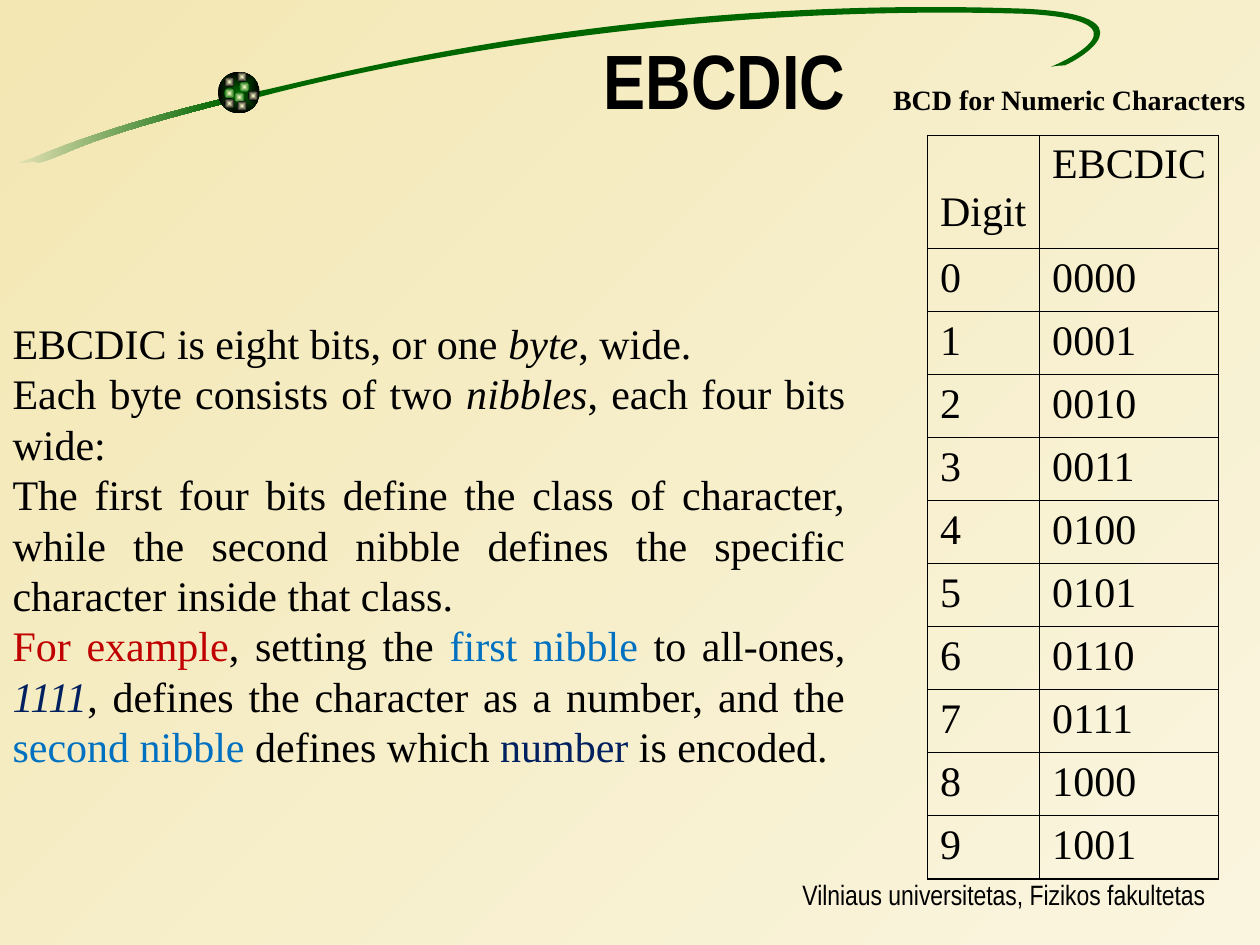
"""Build the EBCDIC slide with its swoosh ornament, explanation and digit table."""
from lxml.etree import SubElement
from pptx import Presentation
from pptx.dml.color import RGBColor
from pptx.enum.shapes import MSO_SHAPE
from pptx.enum.text import MSO_ANCHOR, MSO_AUTO_SIZE, PP_ALIGN
from pptx.oxml import parse_xml
from pptx.oxml.ns import nsdecls, qn
from pptx.util import Pt

COLORS = {
    "black": "000000", "green": "006600", "cream": "FFFFCC", "sand": "F5EBC1",
    "background_start": "F3E7B3", "background_end": "FAF5DF",
    "red": "C00000", "blue": "0070C0", "navy": "002060",
}
SERIF, NARROW = "Times New Roman", "Arial Narrow"

TAIL = [
    (128.2, 56.2),
    (65.5, 71.3), (35.3, 83.5), (18, 90.7),
    (0.7, 96.5), (18.7, 90.7), (22.3, 92.9),
    (41, 87.8), (41, 81.4), (128.9, 59),
]
SWOOSH = [
    (145.4, 52.6),
    (177.1, 46.8), (349.9, -3.6), (586.1, 5),
    (660.2, 8.6), (617, 33.8), (608.4, 37.4),
    (608.4, 37.4), (603.4, 37.4), (600.5, 38.2),
    (607.7, 35.3), (660.2, 11.5), (585.4, 7.9),
    (394.6, 2.2), (230.4, 33.8), (148.3, 55.4),
]
SPOTS = [
    (136.8, 46.8, "green"), (128.2, 43.9, "black"), (128.2, 50.4, "green"),
    (133.9, 52.6, "green"), (141.8, 51.8, "black"), (135.4, 57.6, "black"),
    (128.2, 56.2, "black"), (135.4, 41, "black"),
]
EXPLANATION = [
    [("EBCDIC is eight bits, or one ", "black", False), ("byte", "black", True),
     (", wide.", "black", False)],
    [("Each byte consists of two ", "black", False), ("nibbles", "black", True),
     (", each four bits wide:", "black", False)],
    [("The first four bits define the class of character, while the second nibble "
      "defines the specific character inside that class.", "black", False)],
    [("For example", "red", False), (", setting the ", "black", False),
     ("first nibble ", "blue", False), ("to all-ones, ", "black", False),
     ("1111", "navy", True), (", defines the character as a number, and the ", "black", False),
     ("second nibble ", "blue", False), ("defines which ", "black", False),
     ("number", "navy", False), (" is encoded.", "black", False)],
]


def rgb(name):
    """Return the named colour."""
    return RGBColor.from_string(COLORS[name])


def place(shape, left, top, width, height):
    """Move and size a shape, in points."""
    shape.left, shape.top, shape.width, shape.height = map(Pt, (left, top, width, height))


def format_run(run, font_name, size, color="black", bold=False, italic=False):
    """Set the font of a run."""
    font = run.font
    font.name, font.size, font.bold, font.italic = font_name, Pt(size), bold, italic
    font.color.rgb = rgb(color)


def fill_gradient(shape, start, end, angle=None):
    """Fill with a linear gradient, or one from the centre if no angle is given."""
    shape.fill.gradient()
    for stop, name, position in zip(shape.fill.gradient_stops, (start, end), (0, 1)):
        stop.color.rgb = rgb(name)
        stop.position = position
    if angle is not None:
        shape.fill.gradient_angle = angle
        return
    gradient = shape._element.spPr.find(qn("a:gradFill"))
    gradient.replace(gradient.find(qn("a:lin")), parse_xml(
        f'<a:path {nsdecls("a")} path="shape">'
        '<a:fillToRect l="50000" t="50000" r="50000" b="50000"/></a:path>'))


def remove_outline(shape):
    """Drop the line and the shadow of a shape."""
    shape.shadow.inherit = False
    shape.line.fill.background()


def add_plain_shape(slide, kind, left, top, width, height):
    """Add a preset shape without line or shadow."""
    shape = slide.shapes.add_shape(kind, *map(Pt, (left, top, width, height)))
    remove_outline(shape)
    return shape


def add_curved_outline(slide, points):
    """Add a closed freeform of cubic curves, three points to each curve."""
    start, *controls = [tuple(map(Pt, point)) for point in points]
    builder = slide.shapes.build_freeform(*start)
    builder.add_line_segments(controls, close=True)
    shape = builder.convert_to_shape()
    remove_outline(shape)
    segments = list(shape._element.iter(qn("a:lnTo")))[:len(controls)]
    for index in range(0, len(segments), 3):
        group = segments[index:index + 3]
        curve = parse_xml(f'<a:cubicBezTo {nsdecls("a")}/>')
        group[0].addprevious(curve)
        for segment in group:
            curve.append(segment[0])
            segment.getparent().remove(segment)
    return shape


def add_ornament(slide):
    """Draw the background, the swoosh and the spotted ball."""
    background = add_plain_shape(slide, MSO_SHAPE.RECTANGLE, 0, 0, 720, 540)
    fill_gradient(background, "background_start", "background_end", 315)
    fill_gradient(add_curved_outline(slide, TAIL), "sand", "green", 0)
    swoosh = add_curved_outline(slide, SWOOSH)
    swoosh.fill.solid()
    swoosh.fill.fore_color.rgb = rgb("green")
    fill_gradient(add_plain_shape(slide, MSO_SHAPE.OVAL, 124.6, 41, 23.8, 23.8), "green", "black")
    for left, top, edge in SPOTS:
        spot = add_plain_shape(slide, MSO_SHAPE.OVAL, left, top, 5.8, 5.8)
        fill_gradient(spot, "cream", edge)


def fill_title(title):
    """Write the slide title."""
    place(title, 108, 0, 612, 90)
    frame = title.text_frame
    frame.text = "EBCDIC"
    frame.auto_size, frame.vertical_anchor = MSO_AUTO_SIZE.NONE, MSO_ANCHOR.MIDDLE
    frame.paragraphs[0].alignment = PP_ALIGN.CENTER
    format_run(frame.paragraphs[0].runs[0], NARROW, 44, bold=True)


def fill_body(body):
    """Write the justified explanation without bullets."""
    place(body, 0, 176.4, 490.3, 269.3)
    frame = body.text_frame
    frame.auto_size, frame.vertical_anchor = MSO_AUTO_SIZE.NONE, MSO_ANCHOR.MIDDLE
    for index, pieces in enumerate(EXPLANATION):
        paragraph = frame.add_paragraph() if index else frame.paragraphs[0]
        paragraph.alignment, paragraph.space_before = PP_ALIGN.JUSTIFY, Pt(0)
        properties = paragraph._p.get_or_add_pPr()
        properties.set("marL", "0")
        properties.set("indent", "0")
        SubElement(properties, qn("a:buNone"))
        for text, color, italic in pieces:
            run = paragraph.add_run()
            run.text = text
            format_run(run, SERIF, 24, color, italic=italic)


def add_label(slide, text, box, font_name, alignment, anchor, wrap=True, bold=False):
    """Add a one-line text box."""
    frame = slide.shapes.add_textbox(*map(Pt, box)).text_frame
    frame.text = text
    frame.word_wrap, frame.vertical_anchor = wrap, anchor
    frame.paragraphs[0].alignment = alignment
    format_run(frame.paragraphs[0].runs[0], font_name, 16, bold=bold)


def add_borders(cell):
    """Draw a thin black line on each side of a cell."""
    for index, side in enumerate(("lnL", "lnR", "lnT", "lnB")):
        cell._tc.get_or_add_tcPr().insert(index, parse_xml(
            f'<a:{side} {nsdecls("a")} w="{Pt(0.75)}"><a:solidFill>'
            f'<a:srgbClr val="{COLORS["black"]}"/></a:solidFill></a:{side}>'))


def add_digit_table(slide):
    """Add the table of digits and their four-bit codes."""
    rows = [("Digit", "EBCDIC")] + [(str(digit), f"{digit:04b}") for digit in range(10)]
    table = slide.shapes.add_table(len(rows), 2, *map(Pt, (530, 77.2, 166.3, 424.8))).table
    table.first_row = table.horz_banding = False
    table.columns[0].width, table.columns[1].width = Pt(64.1), Pt(102.2)
    for row_index, values in enumerate(rows):
        table.rows[row_index].height = Pt(36 if row_index else 64.8)
        for column_index, value in enumerate(values):
            cell = table.cell(row_index, column_index)
            cell.text = value
            cell.margin_right = Pt(3)
            cell.fill.background()
            add_borders(cell)
            format_run(cell.text_frame.paragraphs[0].runs[0], SERIF, 24)
    digit_heading = table.cell(0, 0)
    digit_heading.vertical_anchor, digit_heading.margin_bottom = MSO_ANCHOR.BOTTOM, Pt(7.5)


def main():
    """Build and save the presentation."""
    presentation = Presentation()
    presentation.slide_width, presentation.slide_height = Pt(720), Pt(540)
    slide = presentation.slides.add_slide(presentation.slide_layouts[1])
    title, body = slide.shapes.title, slide.placeholders[1]
    add_ornament(slide)
    add_label(slide, "Vilniaus universitetas, Fizikos fakultetas", (396, 498, 300, 42),
              NARROW, PP_ALIGN.RIGHT, MSO_ANCHOR.TOP)
    for placeholder in (title, body):
        slide.shapes._spTree.append(placeholder._element)
    fill_title(title)
    fill_body(body)
    add_label(slide, "BCD for Numeric Characters", (503.3, 43.2, 216.7, 26.6),
              SERIF, PP_ALIGN.LEFT, MSO_ANCHOR.MIDDLE, wrap=False, bold=True)
    add_digit_table(slide)
    presentation.save("out.pptx")


if __name__ == "__main__":
    main()
